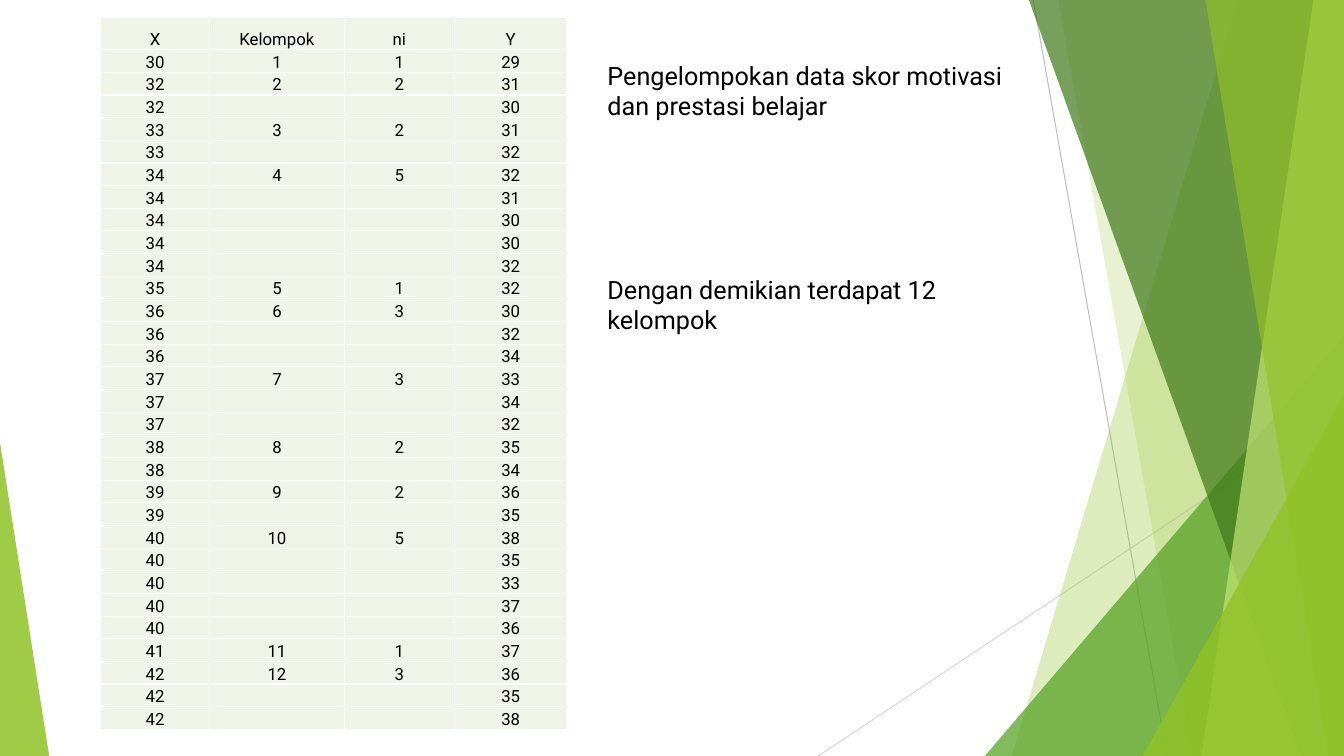
import pptx
import pptx.dml.color
import pptx.enum.shapes
import pptx.enum.text
import pptx.oxml
import pptx.oxml.ns
import pptx.util
from lxml import etree

Cm = pptx.util.Cm
Pt = pptx.util.Pt

HEADINGS = ["X", "Kelompok", "ni", "Y"]
# Each group: motivation score X and its achievement scores Y
GROUPS = [
    (30, [29]),
    (32, [31, 30]),
    (33, [31, 32]),
    (34, [32, 31, 30, 30, 32]),
    (35, [32]),
    (36, [30, 32, 34]),
    (37, [33, 34, 32]),
    (38, [35, 34]),
    (39, [36, 35]),
    (40, [38, 35, 33, 37, 36]),
    (41, [37]),
    (42, [36, 35, 38]),
]
# Text, left, top, width, height in cm
NOTES = [
    ("Dengan demikian terdapat 12 kelompok", 15.06, 6.78, 10.13, 1.8),
    ("Pengelompokan data skor motivasi dan prestasi belajar", 15.06, 1.4, 10.97, 2.57),
]

WIDTH, HEIGHT = 33.87, 19.05
COLUMN_WIDTHS = [2.74, 3.4, 2.77, 2.84]
TABLE_LEFT, TABLE_TOP = 2.54, 0.44
HEADING_HEIGHT, ROW_HEIGHT = 0.81, 0.57
FONT, BLACK, WHITE, CELL_FILL = "Roboto", "000000", "FFFFFF", "EEF4E8"

# Start x, start y, end x, end y, colour
RAYS = [(26.04, 0, 29.41, HEIGHT, "BFBFBF"), (WIDTH, 10.24, 20.62, HEIGHT, "D9D9D9")]
# From back to front. A wedge runs from its slanted edge (top x, bottom x) to the
# right side; a corner is a right triangle (left, top, width, apex position).
FACETS = [
    ("wedge", (31.19, 25.5), "90C226", 30),
    ("wedge", (26.67, 30.05), "90C226", 20),
    ("corner", (24.82, 8.46, 9.05, 1), "54A021", 72),
    ("wedge", (25.93, 32.79), "3F7819", 70),
    ("wedge", (33.1, 30.28), "C0E474", 70),
    ("wedge", (30.38, 33.48), "90C226", 65),
    ("corner", (28.8, 9.98, 5.07, 1), "90C226", 80),
    ("corner", (0, 11.15, 1.24, 0), "90C226", 85),
]


def rgb(value):
    return pptx.dml.color.RGBColor.from_string(value)


def add_child(parent, tag, **attributes):
    return etree.SubElement(parent, pptx.oxml.ns.qn(tag), **attributes)


def write(para, text, size):
    span = para.add_run()
    span.text = text
    span.font.name = FONT
    span.font.size = Pt(size)
    span.font.color.rgb = rgb(BLACK)


def draw_ray(page, x1, y1, x2, y2, colour):
    ray = page.shapes.add_connector(
        pptx.enum.shapes.MSO_CONNECTOR.STRAIGHT, Cm(x1), Cm(y1), Cm(x2), Cm(y2))
    ray.line.color.rgb = rgb(colour)
    ray.line.width = Pt(0.75)
    add_child(ray._element.spPr, "a:effectLst")


def draw_facet(page, kind, place, colour, opacity):
    if kind == "wedge":
        top_x, bottom_x = place
        outline = page.shapes.build_freeform(Cm(top_x), 0)
        corners = [(WIDTH, 0), (WIDTH, HEIGHT), (bottom_x, HEIGHT)]
        outline.add_line_segments([(Cm(x), Cm(y)) for x, y in corners])
        facet = outline.convert_to_shape()
    else:
        left, top, width, apex = place
        facet = page.shapes.add_shape(
            pptx.enum.shapes.MSO_SHAPE.ISOSCELES_TRIANGLE,
            Cm(left), Cm(top), Cm(width), Cm(HEIGHT - top))
        facet.adjustments[0] = apex
    facet.shadow.inherit = False
    facet.line.fill.background()
    facet.fill.solid()
    facet.fill.fore_color.rgb = rgb(colour)
    shade = facet._element.spPr.find(".//" + pptx.oxml.ns.qn("a:srgbClr"))
    add_child(shade, "a:alpha", val=str(opacity * 1000))


def table_rows():
    """Number the groups and show number and size on each group's first row."""
    rows = [HEADINGS]
    for number, (score, results) in enumerate(GROUPS, 1):
        for position, result in enumerate(results):
            labels = ["", ""] if position else [str(number), str(len(results))]
            rows.append([str(score), *labels, str(result)])
    return rows


def fill_cell(cell, text):
    cell.margin_left = cell.margin_right = Cm(0.15)
    cell.margin_top = cell.margin_bottom = 0
    cell.vertical_anchor = pptx.enum.text.MSO_ANCHOR.BOTTOM
    properties = cell._tc.get_or_add_tcPr()
    for side in ("a:lnL", "a:lnR", "a:lnT", "a:lnB"):
        border = add_child(properties, side, w=str(Pt(1)))
        add_child(add_child(border, "a:solidFill"), "a:srgbClr", val=WHITE)
    cell.fill.solid()
    cell.fill.fore_color.rgb = rgb(CELL_FILL)
    para = cell.text_frame.paragraphs[0]
    para.alignment = pptx.enum.text.PP_ALIGN.CENTER
    para.line_spacing = 1.15
    if text:
        write(para, text, 12)
    else:
        end = add_child(para._p, "a:endParaRPr", sz="1200")
        add_child(end, "a:latin", typeface=FONT)


def draw_table(page):
    rows = table_rows()
    heights = [HEADING_HEIGHT] + [ROW_HEIGHT] * (len(rows) - 1)
    table = page.shapes.add_table(
        len(rows), len(HEADINGS), Cm(TABLE_LEFT), Cm(TABLE_TOP),
        Cm(sum(COLUMN_WIDTHS)), Cm(sum(heights))).table
    table.first_row = table.horz_banding = False
    for column, width in zip(table.columns, COLUMN_WIDTHS):
        column.width = Cm(width)
    for row, height, texts in zip(table.rows, heights, rows):
        row.height = Cm(height)
        for cell, text in zip(row.cells, texts):
            fill_cell(cell, text)


def draw_note(page, text, left, top, width, height):
    box = page.shapes.add_textbox(Cm(left), Cm(top), Cm(width), Cm(height))
    box.text_frame.word_wrap = True
    write(box.text_frame.paragraphs[0], text, 18)


def main():
    deck = pptx.Presentation()
    deck.slide_width, deck.slide_height = Cm(WIDTH), Cm(HEIGHT)
    page = deck.slides.add_slide(deck.slide_layouts[6])
    for ray in RAYS:
        draw_ray(page, *ray)
    for facet in FACETS:
        draw_facet(page, *facet)
    draw_table(page)
    for note in NOTES:
        draw_note(page, *note)
    deck.save("out.pptx")


if __name__ == "__main__":
    main()
